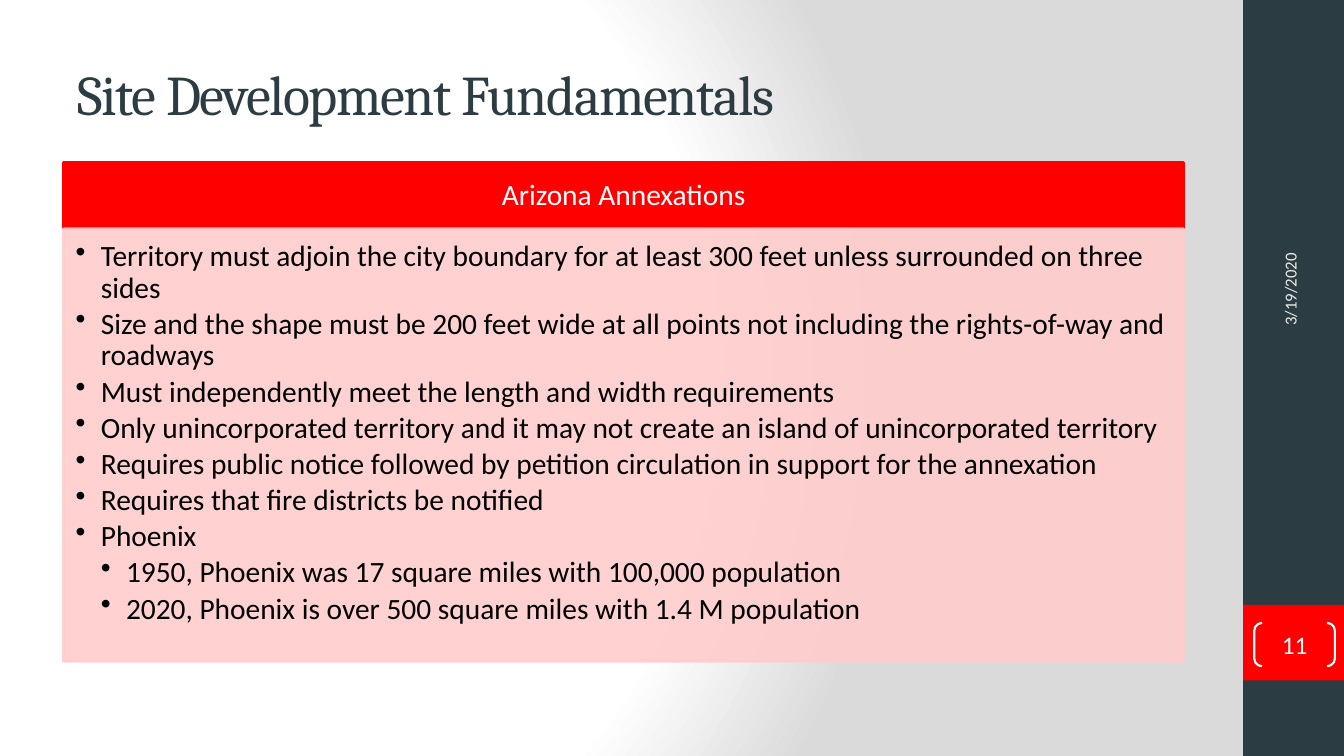
from pptx import Presentation
from pptx.dml.color import RGBColor
from pptx.enum.shapes import MSO_SHAPE
from pptx.enum.text import MSO_ANCHOR, MSO_AUTO_SIZE, PP_ALIGN
from pptx.oxml import parse_xml
from pptx.oxml.ns import nsdecls, qn
from pptx.util import Inches, Pt

RECT, BRACKETS = MSO_SHAPE.RECTANGLE, MSO_SHAPE.DOUBLE_BRACKET
MIDDLE, TOP = MSO_ANCHOR.MIDDLE, MSO_ANCHOR.TOP
LEFT, CENTER = PP_ALIGN.LEFT, PP_ALIGN.CENTER
NO_FIT = MSO_AUTO_SIZE.NONE

COLORS = {
    "slate": "2C3C43", "red": "FF0000", "pink": "FFCCCC", "white": "FFFFFF",
    "gray": "DADADA", "pale": "EBEBEB", "black": "000000",
}
HEADING, BODY = "Cambria", "Calibri"
DEFAULT_INSETS = (0.1, 0.05, 0.1, 0.05)

# Bullet text with its level
RULES = [
    ("Territory must adjoin the city boundary for at least 300 feet unless "
     "surrounded on three sides", 1),
    ("Size and the shape must be 200 feet wide at all points not including "
     "the rights-of-way and roadways", 1),
    ("Must independently meet the length and width requirements", 1),
    ("Only unincorporated territory and it may not create an island of "
     "unincorporated territory", 1),
    ("Requires public notice followed by petition circulation in support "
     "for the annexation", 1),
    ("Requires that fire districts be notified", 1),
    ("Phoenix", 1),
    ("1950, Phoenix was 17 square miles with 100,000 population", 2),
    ("2020, Phoenix is over 500 square miles with 1.4 M population", 2),
]


def rgb(name):
    return RGBColor.from_string(COLORS[name])


def write(p, text, size=21, color="black", font=BODY, align=LEFT,
          spacing=None, after=None, level=0, tracking=None):
    """Fill one paragraph; a level above zero makes it a bullet."""
    p.alignment = align
    pPr = p._p.get_or_add_pPr()
    if spacing:
        p.line_spacing = spacing
    if after:
        pPr.append(parse_xml(f'<a:spcAft {nsdecls("a")}>'
                             f'<a:spcPct val="{after * 1000}"/></a:spcAft>'))
    if level:
        p.level = level
        pPr.set("marL", str(Inches(0.25 * level)))
        pPr.set("indent", str(Inches(-0.25)))
        pPr.append(parse_xml(f'<a:buChar {nsdecls("a")} char="•"/>'))
    r = p.add_run()
    r.text = text
    r.font.name, r.font.size = font, Pt(size)
    r.font.color.rgb = rgb(color)
    if tracking:
        r._r.get_or_add_rPr().set("spc", str(tracking * 100))


class Deck:
    def __init__(self, prs):
        self.s = prs.slides.add_slide(prs.slide_layouts[5])

    def background(self):
        stops = "".join(
            f'<a:gs pos="{pos * 1000}"><a:srgbClr val="{COLORS[c]}"/></a:gs>'
            for pos, c in ((0, "white"), (75, "white"), (100, "gray")))
        self.s._element.cSld.insert(0, parse_xml(
            f'<p:bg {nsdecls("p", "a")}><p:bgPr><a:gradFill rotWithShape="1">'
            f'<a:gsLst>{stops}</a:gsLst><a:path path="circle">'
            '<a:fillToRect l="20000" t="50000" r="100000" b="50000"/></a:path>'
            '</a:gradFill><a:effectLst/></p:bgPr></p:bg>'))

    def frame(self, sp, anchor=MIDDLE, insets=DEFAULT_INSETS):
        tf = sp.text_frame
        tf.word_wrap, tf.auto_size = True, NO_FIT
        tf.vertical_anchor = anchor
        (tf.margin_left, tf.margin_top,
         tf.margin_right, tf.margin_bottom) = map(Inches, insets)
        return tf

    def title(self, text, box):
        sp = self.s.shapes.title
        sp.left, sp.top, sp.width, sp.height = map(Inches, box)
        write(self.frame(sp).paragraphs[0], text, size=40, color="slate",
              font=HEADING, tracking=-1)

    def shape(self, box, kind=RECT, fill=None, line=None, width=2, alpha=None):
        sp = self.s.shapes.add_shape(kind, *map(Inches, box))
        sp.shadow.inherit = False
        if fill:
            sp.fill.solid()
            sp.fill.fore_color.rgb = rgb(fill)
        else:
            sp.fill.background()
        if line:
            sp.line.color.rgb = rgb(line)
            sp.line.width = Pt(width)
        else:
            sp.line.fill.background()
        if alpha:
            for clr in sp._element.spPr.iter(qn("a:srgbClr")):
                clr.append(parse_xml(
                    f'<a:alpha {nsdecls("a")} val="{alpha * 1000}"/>'))
        return sp

    def label(self, text, box, rotation=0, **fmt):
        sp = self.s.shapes.add_textbox(*map(Inches, box))
        sp.rotation = rotation
        write(self.frame(sp).paragraphs[0], text, **fmt)


def main():
    prs = Presentation()
    prs.slide_width, prs.slide_height = Inches(13.33), Inches(7.5)
    deck = Deck(prs)
    deck.background()

    # Side band with the page marker
    deck.shape((12.33, 0, 1, 7.5), fill="slate")
    deck.shape((12.33, 6, 1, 0.75), fill="red")

    deck.title("Site Development Fundamentals", (0.67, 0.3, 11.11, 1.25))

    # Panel header
    header = deck.shape((0.63, 1.61, 11.11, 0.66), fill="red", line="red")
    tf = deck.frame(header, insets=(0.16, 0.09, 0.16, 0.09))
    write(tf.paragraphs[0], "Arizona Annexations", color="white",
          align=CENTER, spacing=0.9, after=35)

    # Panel body
    body = deck.shape((0.63, 2.27, 11.11, 4.29), fill="pink", line="pink",
                      alpha=90)
    tf = deck.frame(body, TOP, (0.12, 0.12, 0.16, 0.18))
    for i, (text, level) in enumerate(RULES):
        p = tf.add_paragraph() if i else tf.paragraphs[0]
        write(p, text, spacing=0.9, after=15, level=level)

    # Date and page number
    deck.label("3/19/2020", (11.46, 1.73, 2.67, 0.53), rotation=270,
               size=12, color="pale")
    marker = deck.shape((12.44, 6.18, 0.8, 0.43), BRACKETS, line="white",
                        width=1.5)
    marker.adjustments[0] = 0.18
    tf = deck.frame(marker, insets=(0, 0, 0, 0))
    write(tf.paragraphs[0], "11", size=18, color="white", align=CENTER)

    prs.save("out.pptx")


if __name__ == "__main__":
    main()
